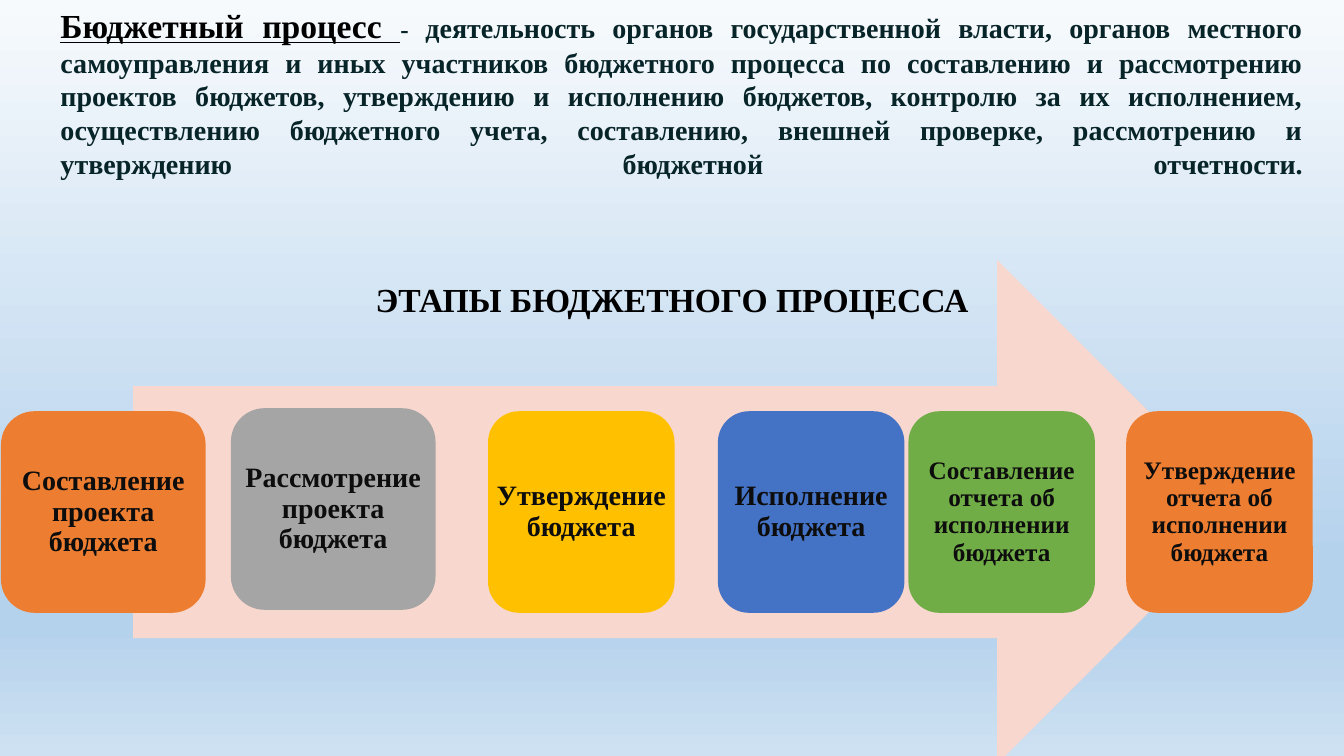
"""Builds a slide on the budget process: its definition and six stages on an arrow."""
from lxml.etree import SubElement
from pptx import Presentation
from pptx.dml.color import RGBColor
from pptx.enum.shapes import MSO_SHAPE
from pptx.enum.text import MSO_ANCHOR, MSO_AUTO_SIZE, PP_ALIGN
from pptx.oxml.ns import qn
from pptx.util import Inches, Pt

FONT = "Times New Roman"
COLORS = {
    "black": "000000", "ink": "072428", "label": "0D0D0D", "arrow": "F8D7CE",
    "orange": "ED7D31", "gray": "A5A5A5", "gold": "FFC000",
    "blue": "4472C4", "green": "70AD47",
}
BACKGROUND_STOPS = [(0, "F7FAFD"), (74, "B5D2EC"), (83, "B5D2EC"), (100, "CEE1F2")]
DEFINITION = [
    ("Бюджетный процесс ", 24, "black", True),
    ("- ", 18, "ink", False),
    ("деятельность органов государственной власти, органов местного самоуправления "
     "и иных участников бюджетного процесса по составлению и рассмотрению проектов "
     "бюджетов, утверждению и исполнению бюджетов, контролю за их исполнением, "
     "осуществлению бюджетного учета, составлению, внешней проверке, рассмотрению "
     "и утверждению бюджетной отчетности.", 20, "ink", False),
]
HEADING = "ЭТАПЫ БЮДЖЕТНОГО ПРОЦЕССА"
STAGE_TOP, STAGE_HEIGHT = 4.08, 2
WIDE, NARROW = 2.03, 1.85
STAGES = [
    ("Составление проекта бюджета", "orange", 0.01, 0, WIDE, 20),
    ("Рассмотрение проекта бюджета", "gray", 2.29, -0.03, WIDE, 20),
    ("Утверждение бюджета", "gold", 4.84, 0, NARROW, 20),
    ("Исполнение бюджета", "blue", 7.12, 0, NARROW, 20),
    ("Составление отчета об исполнении бюджета", "green", 9.01, 0, NARROW, 18),
    ("Утверждение отчета об исполнении бюджета", "orange", 11.17, 0, NARROW, 18),
]


def paint_background(page):
    fill = page.background.fill
    fill.gradient()
    fill.gradient_angle = 270
    stops = page.element.find(".//" + qn("a:gsLst"))
    for stop in list(stops):
        stops.remove(stop)
    for position, color in BACKGROUND_STOPS:
        stop = SubElement(stops, qn("a:gs"), pos=str(position * 1000))
        SubElement(stop, qn("a:srgbClr"), val=color)


def add_span(para, text, size, color, underline=False):
    span = para.add_run()
    span.text = text
    span.font.name = FONT
    span.font.size = Pt(size)
    span.font.bold = True
    span.font.underline = underline
    span.font.color.rgb = RGBColor.from_string(COLORS[color])


def add_block(page, kind, area, color):
    block = page.shapes.add_shape(kind, *map(Inches, area))
    block.shadow.inherit = False
    block.fill.solid()
    block.fill.fore_color.rgb = RGBColor.from_string(COLORS[color])
    block.line.fill.background()
    return block


def add_label(page, area, text, size, color, inset=None, spacing=None):
    frame = page.shapes.add_textbox(*map(Inches, area)).text_frame
    frame.word_wrap = True
    if inset is not None:
        frame.vertical_anchor = MSO_ANCHOR.MIDDLE
        frame.margin_left = frame.margin_right = Inches(inset)
        frame.margin_top = frame.margin_bottom = Inches(inset)
    para = frame.paragraphs[0]
    para.alignment = PP_ALIGN.CENTER
    para.line_spacing = spacing
    add_span(para, text, size, color)


def fill_title(title):
    title.left, title.top, title.width, title.height = map(Inches, (0.5, 0, 12.52, 1.56))
    frame = title.text_frame
    frame.word_wrap = True
    frame.auto_size = MSO_AUTO_SIZE.NONE
    frame.vertical_anchor = MSO_ANCHOR.TOP
    para = frame.paragraphs[0]
    para.alignment = PP_ALIGN.JUSTIFY
    for text, size, color, underline in DEFINITION:
        add_span(para, text, size, color, underline)
    para.add_line_break()
    para.add_line_break()


def main():
    deck = Presentation()
    deck.slide_width, deck.slide_height = Inches(13.33), Inches(7.5)
    page = deck.slides.add_slide(deck.slide_layouts[5])
    paint_background(page)
    fill_title(page.shapes.title)
    add_block(page, MSO_SHAPE.RIGHT_ARROW, (1.32, 2.58, 11.07, 5), "arrow")
    for text, color, left, shift, width, size in STAGES:
        area = (left, STAGE_TOP + shift, width, STAGE_HEIGHT)
        add_block(page, MSO_SHAPE.ROUNDED_RECTANGLE, area, color)
        add_label(page, area, text, size, "label", inset=size / 250, spacing=0.9)
    add_label(page, (1.82, 2.72, 9.69, 0.51), HEADING, 24, "black")
    deck.save("out.pptx")


if __name__ == "__main__":
    main()
